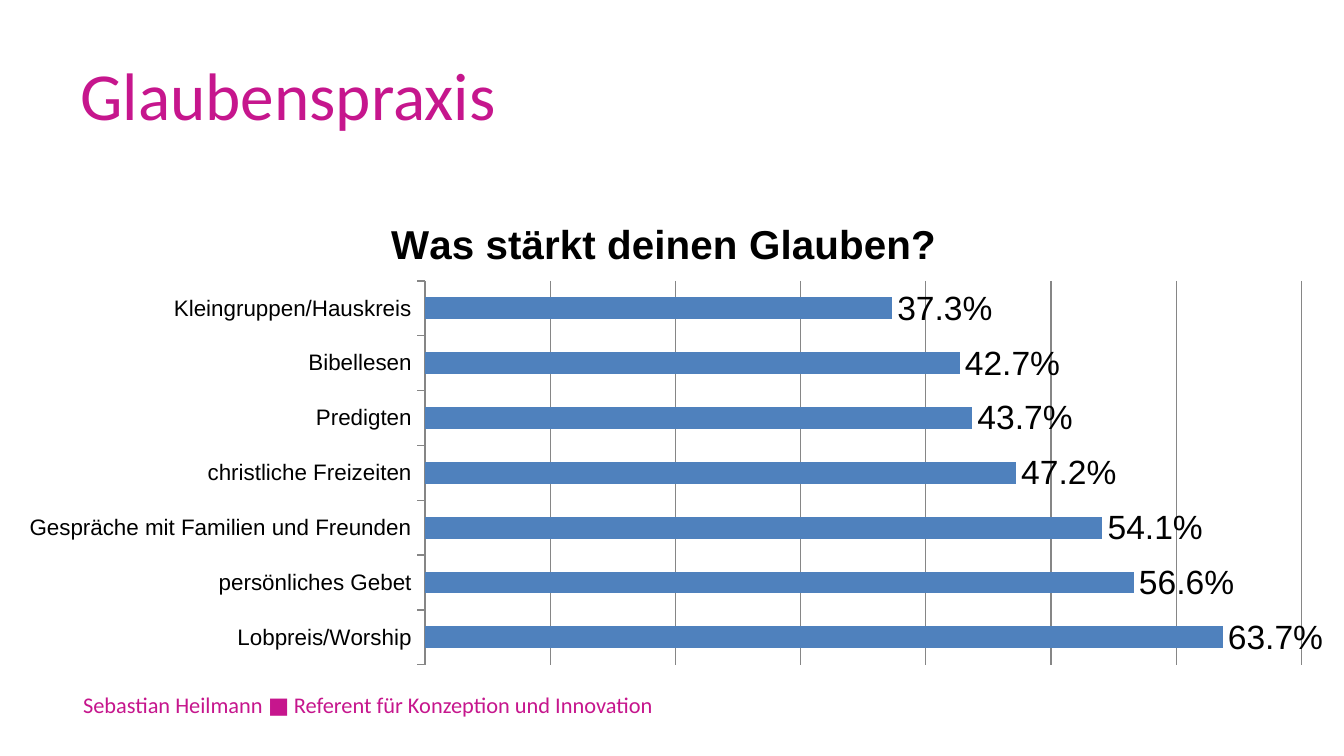
from lxml import etree
from pptx import Presentation
from pptx import util as u
from pptx.chart.data import CategoryChartData
from pptx.dml.color import RGBColor
from pptx.enum import chart as charts, text
from pptx.oxml import ns

MAGENTA = "C6168D"
BLUE = "4F81BD"
BLACK = "000000"
GREY = "868686"

ANSWERS = {
    "Lobpreis/Worship": 0.637,
    "persönliches Gebet": 0.566,
    "Gespräche mit Familien und Freunden": 0.541,
    "christliche Freizeiten": 0.472,
    "Predigten": 0.437,
    "Bibellesen": 0.427,
    "Kleingruppen/Hauskreis": 0.373,
}


def cm_box(*lengths):
    """Turn left, top, width and height in centimetres into lengths."""
    return [u.Cm(length) for length in lengths]


def paint(color_format, color):
    """Set a fill, line or font colour from a hex string."""
    color_format.rgb = RGBColor.from_string(color)


def style_font(font, name, size, color, bold=False):
    """Set the typeface, size, colour and weight of a font."""
    font.name, font.size, font.bold = name, u.Pt(size), bold
    paint(font.color, color)


def add_line(page, box, words, size):
    """Place one vertically centred line of magenta text in the box."""
    frame = page.shapes.add_textbox(*box).text_frame
    frame.word_wrap = True
    frame.vertical_anchor = text.MSO_ANCHOR.MIDDLE
    span = frame.paragraphs[0].add_run()
    span.text = words
    style_font(span.font, "Calibri", size, MAGENTA)


def fix_plot_area(chart, **fractions):
    """Pin the inner plot area to fractions of the chart box."""
    area = chart._chartSpace.find(".//" + ns.qn("c:plotArea"))
    for old in area.findall(ns.qn("c:layout")):
        area.remove(old)
    layout = etree.Element(ns.qn("c:layout"))
    manual = etree.SubElement(layout, ns.qn("c:manualLayout"))
    settings = {"layoutTarget": "inner", "xMode": "edge", "yMode": "edge", **fractions}
    for tag, value in settings.items():
        etree.SubElement(manual, ns.qn("c:" + tag)).set("val", str(value))
    area.insert(0, layout)


def style_axes(chart):
    """Show the answers on the left and keep only gridlines for the values."""
    answers, shares = chart.category_axis, chart.value_axis
    answers.major_tick_mark = charts.XL_TICK_MARK.OUTSIDE
    style_font(answers.tick_labels.font, "Arial", 12, BLACK)
    shares.visible = False
    shares.minimum_scale, shares.maximum_scale, shares.major_unit = 0, 0.7, 0.1
    shares.has_major_gridlines = True
    for line in (answers.format.line, shares.major_gridlines.format.line):
        paint(line.color, GREY)
        line.width = u.Pt(0.75)


def style_bars(chart):
    """Colour the bars and label each with its percentage."""
    plot = chart.plots[0]
    plot.gap_width = 150
    plot.vary_by_categories = False
    fill = plot.series[0].format.fill
    fill.solid()
    paint(fill.fore_color, BLUE)
    plot.has_data_labels = True
    labels = plot.data_labels
    labels.show_value = True
    labels.number_format, labels.number_format_is_linked = "0.0%", False
    labels.position = charts.XL_LABEL_POSITION.OUTSIDE_END
    style_font(labels.font, "Arial", 18, BLACK)


def add_survey_chart(page, box):
    """Place the titled bar chart of survey answers in the box."""
    data = CategoryChartData(number_format="0.0%")
    data.categories = list(ANSWERS)
    data.add_series("Series 1", list(ANSWERS.values()))
    kind = charts.XL_CHART_TYPE.BAR_CLUSTERED
    chart = page.shapes.add_chart(kind, *box, data).chart
    style_font(chart.font, "Arial", 18, BLACK)
    chart.has_legend = False
    chart.has_title = True
    span = chart.chart_title.text_frame.paragraphs[0].add_run()
    span.text = "Was stärkt deinen Glauben?"
    style_font(span.font, "Arial", 21.6, BLACK, bold=True)
    style_axes(chart)
    style_bars(chart)
    fix_plot_area(chart, x=0.32, y=0.18, w=0.66, h=0.8)


def main():
    """Build and save the deck."""
    deck = Presentation()
    deck.slide_width, deck.slide_height = u.Cm(25.4), u.Cm(14.29)
    page = deck.slides.add_slide(deck.slide_layouts[6])
    footer = "Sebastian Heilmann ■ Referent für Konzeption und Innovation"
    add_line(page, cm_box(1.32, 12.9, 12.98, 0.84), footer, 12)
    add_line(page, cm_box(1.27, 0.58, 22.86, 2.39), "Glaubenspraxis", 36)
    add_survey_chart(page, cm_box(0, 3.68, 25.1, 9.07))
    deck.save("out.pptx")


if __name__ == "__main__":
    main()
